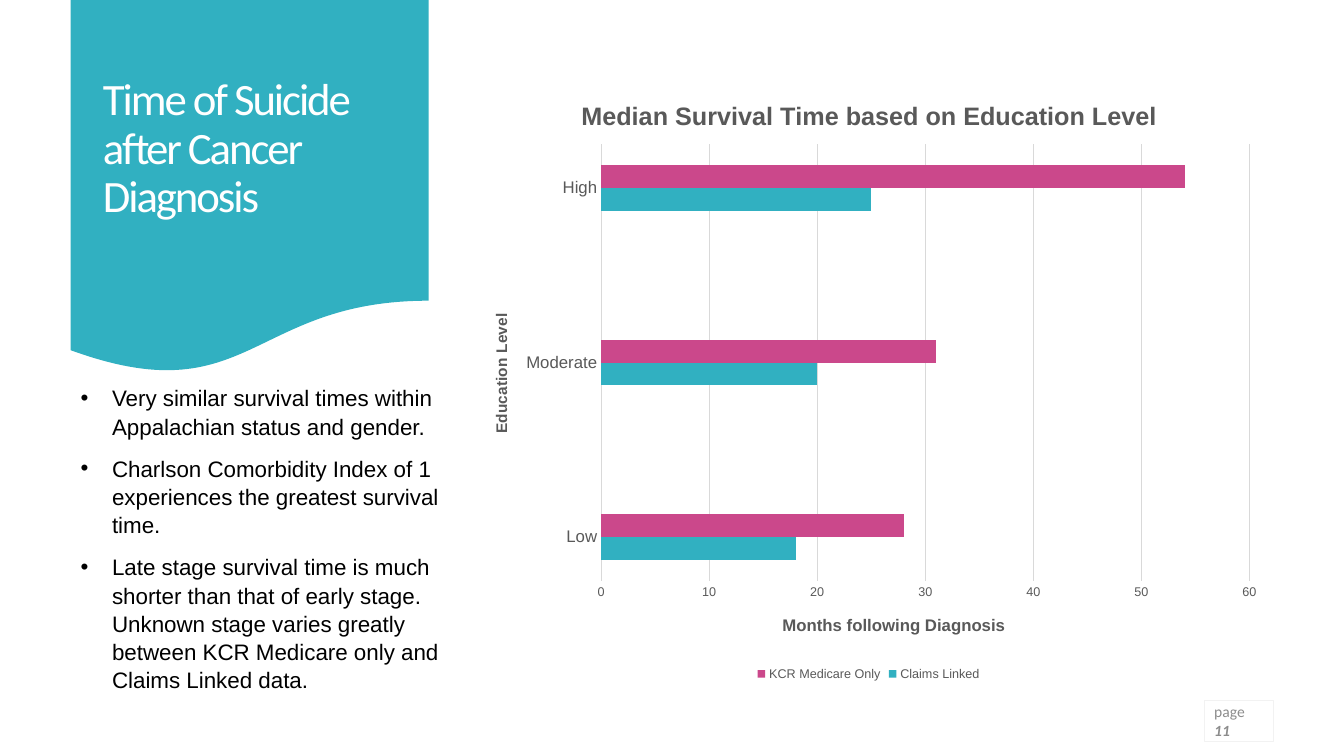
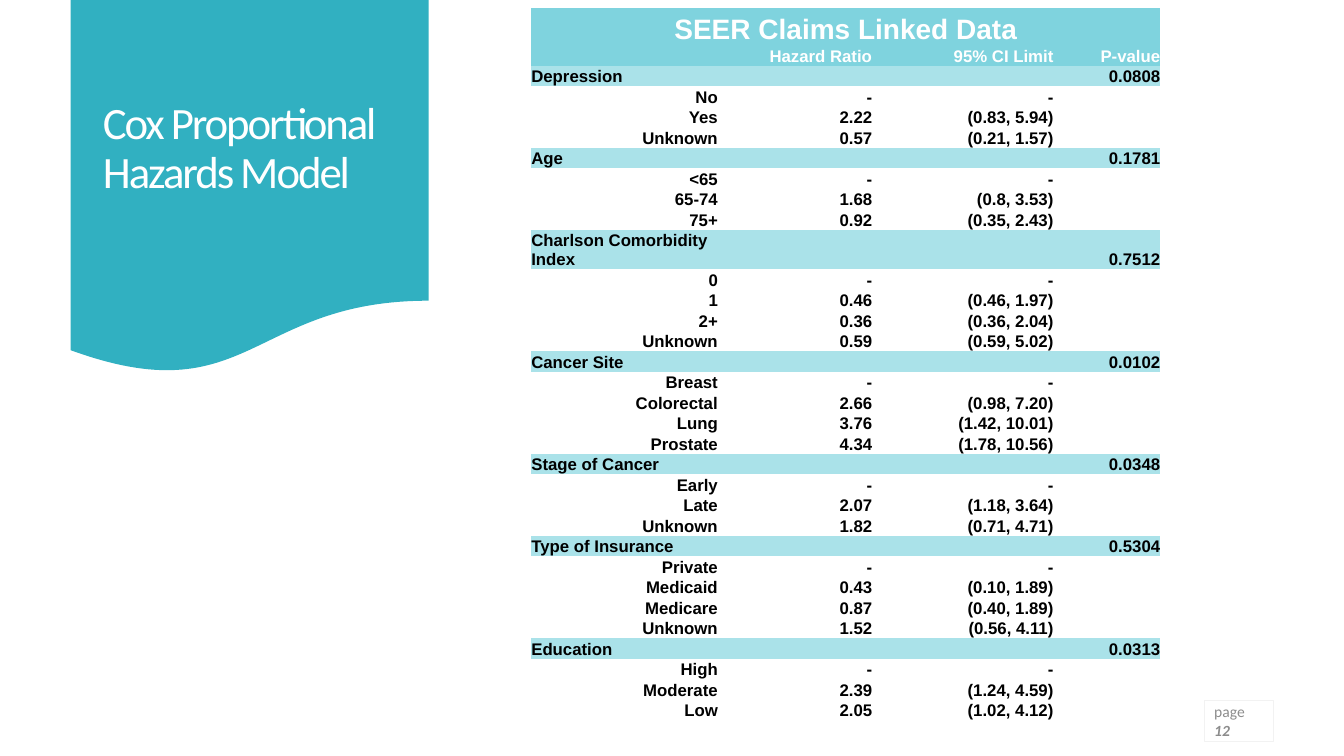
from lxml import etree
from pptx import Presentation
from pptx.chart.data import CategoryChartData
from pptx.dml.color import RGBColor
from pptx.enum.chart import XL_CHART_TYPE, XL_LEGEND_POSITION, XL_TICK_MARK
from pptx.enum.shapes import MSO_SHAPE
from pptx.enum.text import MSO_ANCHOR, MSO_AUTO_SIZE, PP_ALIGN
from pptx.oxml.ns import qn
from pptx.util import Cm, Pt

TEAL = RGBColor(0x31, 0xB0, 0xC1)
TEAL_MEDIUM = RGBColor(0x7F, 0xD3, 0xDE)
TEAL_LIGHT = RGBColor(0xAA, 0xE2, 0xE9)
PINK = RGBColor(0xCB, 0x48, 0x8B)
WHITE = RGBColor(0xFF, 0xFF, 0xFF)
BLACK = RGBColor(0x00, 0x00, 0x00)
DARK_GRAY = RGBColor(0x59, 0x59, 0x59)
PAGE_GRAY = RGBColor(0x8C, 0x8C, 0x8C)
GRID_GRAY = RGBColor(0xD9, 0xD9, 0xD9)
PALE_GRAY = RGBColor(0xF2, 0xF2, 0xF2)

LEFT, CENTER, RIGHT = PP_ALIGN.LEFT, PP_ALIGN.CENTER, PP_ALIGN.RIGHT
MIDDLE, BOTTOM = MSO_ANCHOR.MIDDLE, MSO_ANCHOR.BOTTOM
NO_AUTOFIT = MSO_AUTO_SIZE.NONE
NO_TICK = XL_TICK_MARK.NONE
BAR_CLUSTERED = XL_CHART_TYPE.BAR_CLUSTERED
LEGEND_BOTTOM = XL_LEGEND_POSITION.BOTTOM
FLAG_SHAPE, RECTANGLE = MSO_SHAPE.FLOWCHART_DOCUMENT, MSO_SHAPE.RECTANGLE

HEADING_FONT, BODY_FONT = "Calibri", "Arial"
CONTENT_LAYOUT, TITLE_ONLY_LAYOUT = 1, 5
PLAIN_TABLE_STYLE = "{2D5ABB26-0587-4C30-8999-92F81FD0307C}"

BULLETS = [
    "Very similar survival times within Appalachian status and gender.",
    "Charlson Comorbidity Index of 1 experiences the greatest survival time.",
    "Late stage survival time is much shorter than that of early stage. Unknown stage "
    "varies greatly between KCR Medicare only and Claims Linked data.",
]
EDUCATION_LEVELS = ["Low", "", "Moderate", "", "High"]
SURVIVAL_MONTHS = [
    ("Claims Linked", [18, None, 20, None, 25], TEAL),
    ("KCR Medicare Only", [28, None, 31, None, 54], PINK),
]
TABLE_HEADINGS = ["", "Hazard Ratio", "95% CI Limit", "P-value"]
COLUMN_WIDTHS = [Cm(4.7), Cm(3.89), Cm(4.57), Cm(2.69)]
TALL_FACTOR = "Charlson Comorbidity Index"
FACTORS = [
    ("Depression", "0.0808", [
        ("No", "-", "-"), ("Yes", "2.22", "(0.83, 5.94)"),
        ("Unknown", "0.57", "(0.21, 1.57)")]),
    ("Age", "0.1781", [
        ("<65", "-", "-"), ("65-74", "1.68", "(0.8, 3.53)"),
        ("75+", "0.92", "(0.35, 2.43)")]),
    (TALL_FACTOR, "0.7512", [
        ("0", "-", "-"), ("1", "0.46", "(0.46, 1.97)"),
        ("2+", "0.36", "(0.36, 2.04)"), ("Unknown", "0.59", "(0.59, 5.02)")]),
    ("Cancer Site", "0.0102", [
        ("Breast", "-", "-"), ("Colorectal", "2.66", "(0.98, 7.20)"),
        ("Lung", "3.76", "(1.42, 10.01)"), ("Prostate", "4.34", "(1.78, 10.56)")]),
    ("Stage of Cancer", "0.0348", [
        ("Early", "-", "-"), ("Late", "2.07", "(1.18, 3.64)"),
        ("Unknown", "1.82", "(0.71, 4.71)")]),
    ("Type of Insurance", "0.5304", [
        ("Private", "-", "-"), ("Medicaid", "0.43", "(0.10, 1.89)"),
        ("Medicare", "0.87", "(0.40, 1.89)"), ("Unknown", "1.52", "(0.56, 4.11)")]),
    ("Education", "0.0313", [
        ("High", "-", "-"), ("Moderate", "2.39", "(1.24, 4.59)"),
        ("Low", "2.05", "(1.02, 4.12)")]),
]


def style_font(font, size, color, bold=False, italic=False, name=BODY_FONT):
    font.name, font.size, font.bold, font.italic = name, Pt(size), bold, italic
    font.color.rgb = color


def write(paragraph, text, align=LEFT, spacing=None, size=12, **font_format):
    paragraph.alignment = align
    if not text:
        end = etree.SubElement(paragraph._p, qn("a:endParaRPr"))
        end.set("sz", str(size * 100))
        return
    run = paragraph.add_run()
    run.text = text
    style_font(run.font, size, **font_format)
    if spacing is not None:
        run.font._element.set("spc", str(spacing))


def place(shape, left, top, width, height):
    shape.left, shape.top, shape.width, shape.height = left, top, width, height


def set_layout(parent, index, **fractions):
    for old_layout in parent.findall(qn("c:layout")):
        parent.remove(old_layout)
    layout = etree.Element(qn("c:layout"))
    parent.insert(index, layout)
    manual = etree.SubElement(layout, qn("c:manualLayout"))
    if "w" in fractions:
        etree.SubElement(manual, qn("c:layoutTarget")).set("val", "inner")
    for side in ("x", "y"):
        etree.SubElement(manual, qn(f"c:{side}Mode")).set("val", "edge")
    for side, value in fractions.items():
        etree.SubElement(manual, qn(f"c:{side}")).set("val", str(value))


def write_chart_title(title, text, size, x, y):
    write(title.text_frame.paragraphs[0], text, align=CENTER, size=size,
          color=DARK_GRAY, bold=True)
    set_layout(title._element, 1, x=x, y=y)


class Deck:
    """Hold the shared style and the slide being built."""

    def __init__(self):
        self.presentation = Presentation()
        self.presentation.slide_width = Cm(33.87)
        self.presentation.slide_height = Cm(19.05)
        self.slide = None

    def add_slide(self, layout, title, page):
        layouts = self.presentation.slide_layouts
        self.slide = self.presentation.slides.add_slide(layouts[layout])
        self.add_flag()
        self.add_title(title)
        self.add_page_box(page)

    def add_box(self, kind, *position):
        shape = self.slide.shapes.add_shape(kind, *position)
        shape.shadow.inherit = False
        return shape

    def add_flag(self):
        flag = self.add_box(FLAG_SHAPE, Cm(1.78), 0, Cm(9.02), Cm(9.45))
        flag.fill.solid()
        flag.fill.fore_color.rgb = TEAL
        flag.line.fill.background()
        self.slide.shapes._spTree.insert(2, flag._element)

    def add_title(self, text):
        title = self.slide.shapes.title
        place(title, Cm(2.34), Cm(0.48), Cm(7.9), Cm(6.58))
        frame = title.text_frame
        frame.auto_size, frame.vertical_anchor = NO_AUTOFIT, MIDDLE
        paragraph = frame.paragraphs[0]
        paragraph.line_spacing = 0.9
        write(paragraph, text, size=32, color=WHITE, name=HEADING_FONT, spacing=-150)

    def add_page_box(self, page):
        box = self.add_box(RECTANGLE, Cm(30.35), Cm(17.65), Cm(1.73), Cm(1.02))
        box.fill.background()
        box.line.color.rgb = PALE_GRAY
        box.line.width = Pt(0.25)
        frame = box.text_frame
        frame.word_wrap, frame.vertical_anchor = True, MIDDLE
        paragraph = frame.paragraphs[0]
        paragraph.space_after = Pt(6)
        for text, strong in (("page ", False), (str(page), True)):
            write(paragraph, text, size=11.1, color=PAGE_GRAY, name=HEADING_FONT,
                  bold=strong, italic=strong)

    def add_bullets(self, items):
        body = self.slide.placeholders[1]
        place(body, Cm(1.78), Cm(9.53), Cm(9.93), Cm(8.13))
        frame = body.text_frame
        frame.auto_size = NO_AUTOFIT
        for index, item in enumerate(items):
            paragraph = frame.add_paragraph() if index else frame.paragraphs[0]
            paragraph.space_before = Pt(10)
            paragraph.line_spacing = 1.05
            write(paragraph, item, size=16, color=BLACK)
            properties = paragraph._p.get_or_add_pPr()
            properties.set("marL", str(Cm(0.79)))
            properties.set("indent", str(-Cm(0.79)))

    def add_bar_chart(self, title, category_title, value_title, categories, series):
        data = CategoryChartData(number_format="0")
        data.categories = categories
        for name, values, _ in series:
            data.add_series(name, values)
        chart = self.slide.shapes.add_chart(
            BAR_CLUSTERED, Cm(11.68), Cm(1.78), Cm(20.42), Cm(15.49), data).chart
        style_font(chart.font, 10, BLACK)
        chart.has_title = True
        write_chart_title(chart.chart_title, title, 18, 0.14, 0.04)

        plot = chart.plots[0]
        plot.gap_width, plot.overlap, plot.vary_by_categories = 182, 0, False
        for bars, (_, _, color) in zip(plot.series, series):
            bars.format.fill.solid()
            bars.format.fill.fore_color.rgb = color
        plot_area = chart._chartSpace.find(".//" + qn("c:plotArea"))
        set_layout(plot_area, 0, x=0.17, y=0.12, w=0.8, h=0.71)

        category_axis, value_axis = chart.category_axis, chart.value_axis
        for axis, size in ((category_axis, 12), (value_axis, 9)):
            axis.major_tick_mark = axis.minor_tick_mark = NO_TICK
            style_font(axis.tick_labels.font, size, DARK_GRAY)
        write_chart_title(category_axis.axis_title, category_title, 11, 0.03, 0.39)
        write_chart_title(value_axis.axis_title, value_title, 12, 0.39, 0.88)
        text_body = category_axis.axis_title._element.find(".//" + qn("a:bodyPr"))
        text_body.set("rot", "-5400000")
        text_body.set("vert", "horz")
        value_axis.minimum_scale, value_axis.maximum_scale = 0, 60
        value_axis.major_unit = 10
        value_axis.tick_labels.number_format = "0"
        value_axis.tick_labels.number_format_is_linked = False
        value_axis.format.line.fill.background()
        value_axis.has_major_gridlines = True
        for line in (category_axis.format.line, value_axis.major_gridlines.format.line):
            line.color.rgb = GRID_GRAY
            line.width = Pt(0.75)

        chart.has_legend = True
        chart.legend.position = LEGEND_BOTTOM
        chart.legend.include_in_layout = False
        style_font(chart.legend.font, 9, DARK_GRAY)

    def fill_row(self, row, texts, fill=None, color=BLACK, first_align=RIGHT, size=12):
        for column, (cell, text) in enumerate(zip(row.cells, texts)):
            cell.margin_left = cell.margin_right = 0
            cell.margin_top = cell.margin_bottom = 0
            cell.vertical_anchor = BOTTOM
            if fill is None:
                cell.fill.background()
            else:
                cell.fill.solid()
                cell.fill.fore_color.rgb = fill
            write(cell.text_frame.paragraphs[0], text, size=size, color=color,
                  bold=True, align=RIGHT if column else first_align)

    def add_hazard_table(self, title, headings, factors):
        row_count = 2 + sum(1 + len(levels) for _, _, levels in factors)
        title_height, row_height = Cm(0.94), Cm(16.3) // (row_count)
        table = self.slide.shapes.add_table(
            row_count, len(headings), Cm(13.39), Cm(0.2), sum(COLUMN_WIDTHS),
            title_height + row_height * row_count).table
        table.first_row = table.horz_banding = False
        table._tbl.tblPr.find(qn("a:tableStyleId")).text = PLAIN_TABLE_STYLE
        for column, width in zip(table.columns, COLUMN_WIDTHS):
            column.width = width
        for row in table.rows:
            row.height = row_height

        rows = iter(table.rows)
        title_row = next(rows)
        title_row.height = title_height
        self.fill_row(title_row, [title, "", "", ""], TEAL_MEDIUM, WHITE, CENTER, 20)
        table.cell(0, 0).merge(table.cell(0, len(headings) - 1))
        self.fill_row(next(rows), headings, TEAL_MEDIUM, WHITE)
        for factor, p_value, levels in factors:
            factor_row = next(rows)
            if factor == TALL_FACTOR:
                factor_row.height = 2 * row_height
            self.fill_row(factor_row, [factor, "", "", p_value], TEAL_LIGHT,
                          first_align=LEFT)
            for level in levels:
                self.fill_row(next(rows), [*level, ""])


def main():
    deck = Deck()
    deck.add_slide(CONTENT_LAYOUT, "Time of Suicide after Cancer Diagnosis", 11)
    deck.add_bar_chart("Median Survival Time based on Education Level", "Education Level",
                       "Months following Diagnosis", EDUCATION_LEVELS, SURVIVAL_MONTHS)
    deck.add_bullets(BULLETS)

    deck.add_slide(TITLE_ONLY_LAYOUT, "Cox Proportional Hazards Model", 12)
    deck.add_hazard_table("SEER Claims Linked Data", TABLE_HEADINGS, FACTORS)
    deck.presentation.save("out.pptx")


if __name__ == "__main__":
    main()
